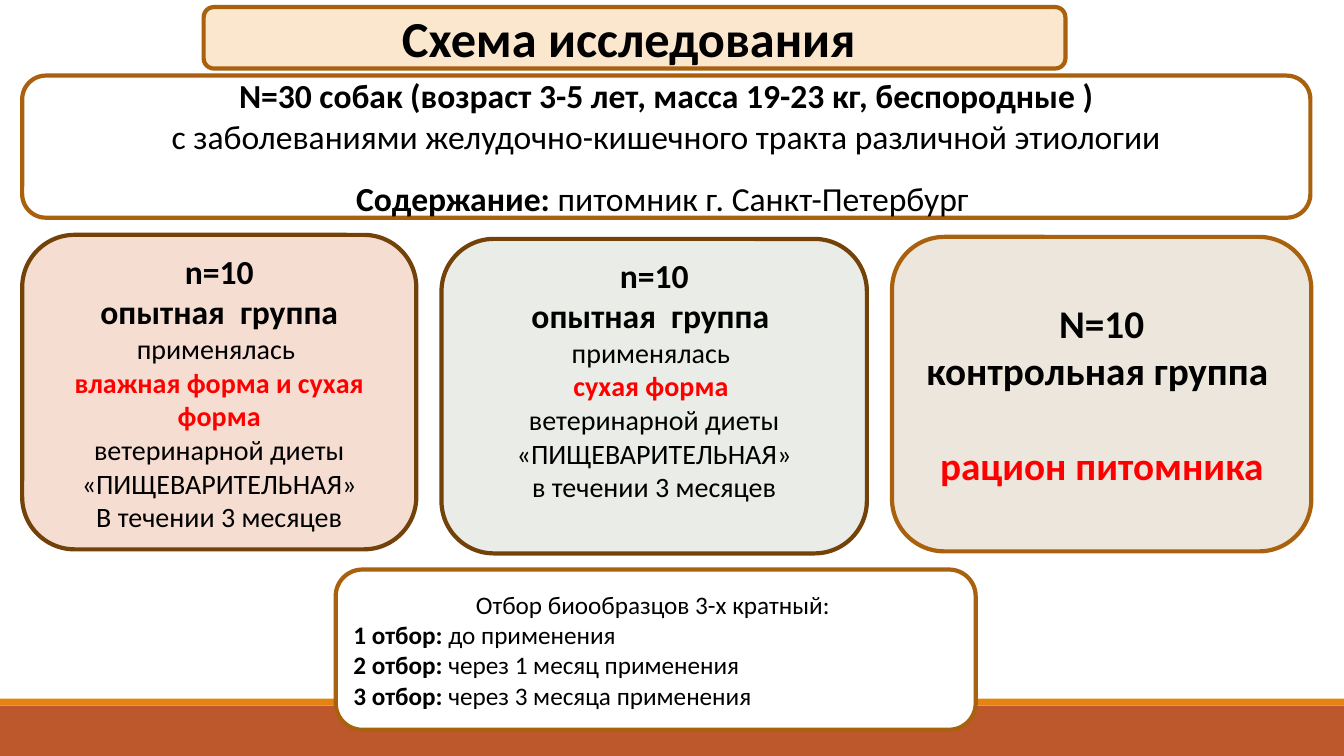
import pptx
import pptx.util
import pptx.dml.color
import pptx.enum.shapes
import pptx.enum.text

Pt = pptx.util.Pt
Shape = pptx.enum.shapes.MSO_SHAPE
Align = pptx.enum.text.PP_ALIGN

theme = {
    "font": "Calibri",
    "black": "000000", "red": "FF0000", "white": "FFFFFF",
    "gold": "A9610D", "brown": "724209",
    "rust": "BD582C", "amber": "E48312",
    "pink": "F5DDD2", "sage": "EAECE7", "sand": "ECE6DD", "peach": "FBE6CE",
    "title": 36, "big": 28, "head": 24, "body": 20, "small": 18,
}

deck = pptx.Presentation()
deck.slide_width, deck.slide_height = Pt(960), Pt(540)
slide = deck.slides.add_slide(deck.slide_layouts[6])


def tint(key):
    return pptx.dml.color.RGBColor.from_string(theme[key])


def draw(kind, box, fill, line=None):
    shape = slide.shapes.add_shape(kind, *[Pt(n) for n in box])
    shape.shadow.inherit = False
    shape.fill.solid()
    shape.fill.fore_color.rgb = tint(fill)
    if line:
        shape.line.color.rgb = tint(line)
        shape.line.width = Pt(3)
    else:
        shape.line.fill.background()
    return shape


draw(Shape.RECTANGLE, (0, 504, 960, 36), "rust")
draw(Shape.RECTANGLE, (0, 499, 960, 5), "amber")

mid, left = Align.CENTER, Align.LEFT
diet = "ветеринарной диеты «ПИЩЕВАРИТЕЛЬНАЯ»"

# Each card: box, fill, line, top and bottom inset, paragraphs
# Each paragraph: alignment, space before, size, runs of text, colour, bold
cards = [
    ((15.84, 54, 920.16, 101.5), "white", "gold", 0, 0, [
        (mid, 0, "head", [("N=30 собак (возраст 3-5 лет, масса 19-23 кг, беспородные )", "black", True)]),
        (mid, 0, "head", [("с заболеваниями желудочно-кишечного тракта различной этиологии", "black", False)]),
        (mid, 15.7, "head", [("Содержание: ", "black", True), ("питомник г. Санкт-Петербург ", "black", False)]),
    ]),
    ((15.84, 167.76, 281.5, 224.64), "pink", "brown", 3.6, 3.6, [
        (mid, 0, "head", [("n=10", "black", True)]),
        (mid, 0, "head", [("опытная  группа", "black", True)]),
        (mid, 0, "body", [("применялась ", "black", False)]),
        (mid, 0, "body", [("влажная форма и сухая форма", "red", True)]),
        (mid, 0, "body", [(diet, "black", False)]),
        (mid, 0, "body", [("В течении 3 месяцев", "black", False)]),
    ]),
    ((315.36, 170.64, 303.84, 224.64), "sage", "brown", 3.6, 28, [
        (mid, 0, "head", [("n=10", "black", True)]),
        (mid, 0, "head", [("опытная  группа ", "black", True)]),
        (mid, 0, "body", [("применялась ", "black", False)]),
        (mid, 0, "body", [("сухая форма ", "red", True)]),
        (mid, 0, "body", [(diet, "black", False)]),
        (mid, 0, "body", [("в течении 3 месяцев", "black", False)]),
    ]),
    ((637.2, 169.2, 299.52, 224.64), "sand", "gold", 3.6, 3.6, [
        (mid, 0, "big", [("N=10", "black", True)]),
        (mid, 0, "big", [("контрольная группа ", "black", True)]),
        (mid, 34.2, "big", [("рацион питомника", "red", True)]),
    ]),
    ((239.76, 406.8, 457.2, 114.48), "white", "gold", 3.6, 3.6, [
        (mid, 0, "small", [("Отбор биообразцов 3-х кратный: ", "black", False)]),
        (left, 0, "small", [("1 отбор: ", "black", True), ("до применения", "black", False)]),
        (left, 0, "small", [("2 отбор: ", "black", True), ("через 1 месяц применения", "black", False)]),
        (left, 0, "small", [("3 отбор: ", "black", True), ("через 3 месяца применения", "black", False)]),
    ]),
    ((145.44, 5.04, 615.6, 43.92), "peach", "gold", 3.6, 3.6, [
        (mid, 0, "title", [("Схема исследования ", "black", True)]),
    ]),
]

for box, fill, line, top, low, paras in cards:
    frame = draw(Shape.ROUNDED_RECTANGLE, box, fill, line).text_frame
    frame.word_wrap = True
    frame.vertical_anchor = pptx.enum.text.MSO_ANCHOR.MIDDLE
    frame.margin_top, frame.margin_bottom = Pt(top), Pt(low)
    for i, (align, gap, size, runs) in enumerate(paras):
        para = frame.add_paragraph() if i else frame.paragraphs[0]
        para.alignment = align
        para.space_before = Pt(gap)
        for text, ink, bold in runs:
            run = para.add_run()
            run.text = text
            run.font.name = theme["font"]
            run.font.size = Pt(theme[size])
            run.font.bold = bold
            run.font.color.rgb = tint(ink)

deck.save("out.pptx")
